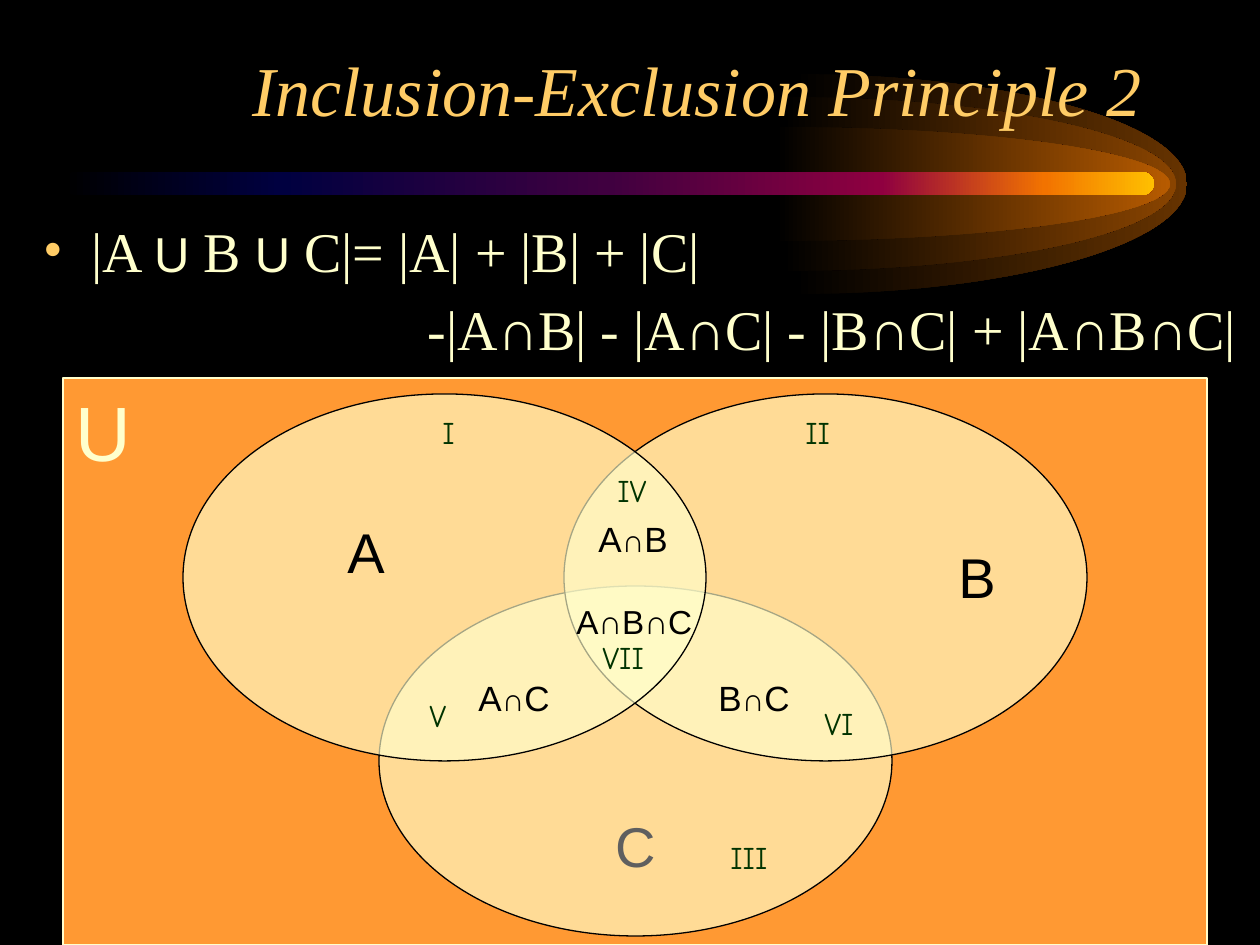
import lxml.etree
import pptx
import pptx.dml.color
import pptx.enum.shapes
import pptx.enum.text
import pptx.oxml.ns
import pptx.util

PX = 914400 // 126
SHAPE = pptx.enum.shapes.MSO_SHAPE
ANCHOR = pptx.enum.text.MSO_ANCHOR
ALIGN = pptx.enum.text.PP_ALIGN
qn = pptx.oxml.ns.qn

SERIF, SANS, HAND = "Times New Roman", "Arial", "Comic Neue"
BLACK, CREAM, GOLD, GREEN = "000000", "FFFFCC", "FFCC66", "003300"

TITLE = "Inclusion-Exclusion Principle 2"
UNION = ["|A ", "U", " B ", "U", " C|= |A| + |B| + |C|"]
INTERSECTIONS = "-|A∩B| - |A∩C| - |B∩C| + |A∩B∩C|"

COMET = [(793, 110, "663300"), (782, 87, "894400"), (776, 57, "B75B00")]
COMET_Y, COMET_LENGTH = 184, 394
ROUNDNESS = 0.55
TAIL = [(0, BLACK), (20, "000040"), (50, "400040"),
        (75, "8F0040"), (90, "F27300"), (100, "FFBF00")]

UNIVERSE = (63, 378, 1144, 567)
SETS = {"C": (379, 586, 513, 350), "B": (564, 394, 523, 367), "A": (183, 394, 523, 367)}
SET_NAMES = [("A", 335, 511), ("B", 946, 536)]
CENTER_OVERLAP = ("A∩B∩C", 564, 595, 152)
OVERLAPS = [("B∩C", 706, 670), ("A∩C", 466, 670), ("A∩B", 586, 511)]
REGIONS = [("I", 430, 407), ("III", 718, 832), ("II", 793, 407), ("V", 417, 690),
           ("IV", 605, 465), ("VII", 590, 632), ("VI", 812, 698)]


def rgb(color):
    return pptx.dml.color.RGBColor.from_string(color)


def box(*lengths):
    return [v * PX for v in lengths]


def sub(parent, tag, **attrs):
    return lxml.etree.SubElement(parent, qn(tag), attrs)


def write(p, text, size, font=SANS, color=BLACK, italic=False, bold=False):
    r = p.add_run()
    r.text = text
    r.font.size = pptx.util.Pt(size)
    r.font.name = font
    r.font.color.rgb = rgb(color)
    r.font.italic = italic
    r.font.bold = bold


def textbox(slide, rect, anchor=ANCHOR.TOP):
    tf = slide.shapes.add_textbox(*box(*rect)).text_frame
    tf.word_wrap = True
    tf.vertical_anchor = anchor
    return tf


def shade(s, stops):
    s.shadow.inherit = False
    s.line.fill.background()
    s.fill.gradient()
    s.fill.gradient_angle = 0
    gs_list = s._element.spPr.find(qn("a:gradFill")).find(qn("a:gsLst"))
    for gs in list(gs_list):
        gs_list.remove(gs)
    for pos, color in stops:
        sub(sub(gs_list, "a:gs", pos=str(pos * 1000)), "a:srgbClr", val=color)


def solid(slide, kind, rect, fill, line, alpha=None):
    s = slide.shapes.add_shape(kind, *box(*rect))
    s.shadow.inherit = False
    s.fill.solid()
    s.fill.fore_color.rgb = rgb(fill)
    s.line.color.rgb = rgb(line)
    s.line.width = pptx.util.Pt(0.75)
    if alpha:
        color = s._element.spPr.find(qn("a:solidFill")).find(qn("a:srgbClr"))
        sub(color, "a:alpha", val=str(alpha * 1000))
    s.text_frame.word_wrap = True
    return s


def half_ellipse(slide, x, y, width, half_height):
    builder = slide.shapes.build_freeform(x, y - half_height, scale=PX)
    builder.add_line_segments([(x + width, y), (x, y + half_height)], close=True)
    s = builder.convert_to_shape()
    bend_x, bend_y = width * ROUNDNESS, half_height * ROUNDNESS
    curves = [
        [(bend_x, 0), (width, half_height - bend_y), (width, half_height)],
        [(width, half_height + bend_y), (bend_x, 2 * half_height), (0, 2 * half_height)],
    ]
    segments = list(s._element.spPr.iter(qn("a:lnTo")))
    for segment, curve in zip(segments, curves):
        bezier = lxml.etree.Element(qn("a:cubicBezTo"))
        for px, py in curve:
            sub(bezier, "a:pt", x=str(round(px)), y=str(round(py)))
        segment.getparent().replace(segment, bezier)
    return s


def add_comet(slide):
    for x, half_height, color in COMET:
        s = half_ellipse(slide, x, COMET_Y, COMET_LENGTH, half_height)
        shade(s, [(0, BLACK), (100, color)])
    s = slide.shapes.add_shape(SHAPE.ROUNDED_RECTANGLE, *box(63, 172, 1091, 23))
    s.adjustments[0] = 0.5
    shade(s, TAIL)


def add_formula(slide):
    tf = textbox(slide, (31, 210, 1229, 189))
    first, second = tf.paragraphs[0], tf.add_paragraph()
    for p, margin, indent, gap in [(first, 48, -48, 4), (second, 384, 0, 6.4)]:
        p.space_before = pptx.util.Pt(gap)
        pPr = p._p.get_or_add_pPr()
        pPr.set("marL", str(margin * PX))
        pPr.set("indent", str(indent * PX))
    pPr = first._p.get_or_add_pPr()
    sub(sub(pPr, "a:buClr"), "a:srgbClr", val=GOLD)
    sub(pPr, "a:buFont", typeface=SERIF)
    sub(pPr, "a:buChar", char="•")
    for text in UNION:
        size, font = (28, SANS) if text == "U" else (32, SERIF)
        write(first, text, size, font=font, color=CREAM)
    for i, text in enumerate(INTERSECTIONS.split("∩")):
        if i:
            write(second, "∩", 32, font=SERIF, color=CREAM, bold=True)
        write(second, text, 32, font=SERIF, color=CREAM)


def add_venn(slide):
    s = solid(slide, SHAPE.RECTANGLE, UNIVERSE, "FF9933", CREAM)
    s.text_frame.vertical_anchor = ANCHOR.TOP
    p = s.text_frame.paragraphs[0]
    p.alignment = ALIGN.LEFT
    write(p, "U", 44, color=CREAM)
    for name, rect in SETS.items():
        s = solid(slide, SHAPE.OVAL, rect, CREAM, BLACK, alpha=65)
        if name == "C":
            s.text_frame.vertical_anchor = ANCHOR.BOTTOM
            p = s.text_frame.paragraphs[0]
            p.alignment = ALIGN.CENTER
            write(p, name, 32, color="5F5F5F")
    for text, x, y in SET_NAMES:
        write(textbox(slide, (x, y, 65, 79)).paragraphs[0], text, 32)
    text, x, y, width = CENTER_OVERLAP
    write(textbox(slide, (x, y, width, 53)).paragraphs[0], text, 19)
    for text, x, y in OVERLAPS:
        p = textbox(slide, (x, y, 110, 54)).paragraphs[0]
        for char in text:
            write(p, char, 18 if char == "∩" else 20)
    for text, x, y in REGIONS:
        tf = textbox(slide, (x, y, 30 + 16 * len(text), 50), ANCHOR.MIDDLE)
        write(tf.paragraphs[0], text, 18, font=HAND, color=GREEN)


def main():
    prs = pptx.Presentation()
    prs.slide_width, prs.slide_height = box(1260, 945)
    slide = prs.slides.add_slide(prs.slide_layouts[6])
    slide.background.fill.solid()
    slide.background.fill.fore_color.rgb = rgb(BLACK)
    add_comet(slide)
    p = textbox(slide, (83, 32, 1071, 105), ANCHOR.BOTTOM).paragraphs[0]
    p.alignment = ALIGN.RIGHT
    write(p, TITLE, 40, font=SERIF, color=GOLD, italic=True)
    add_formula(slide)
    add_venn(slide)
    prs.save("out.pptx")


if __name__ == "__main__":
    main()
